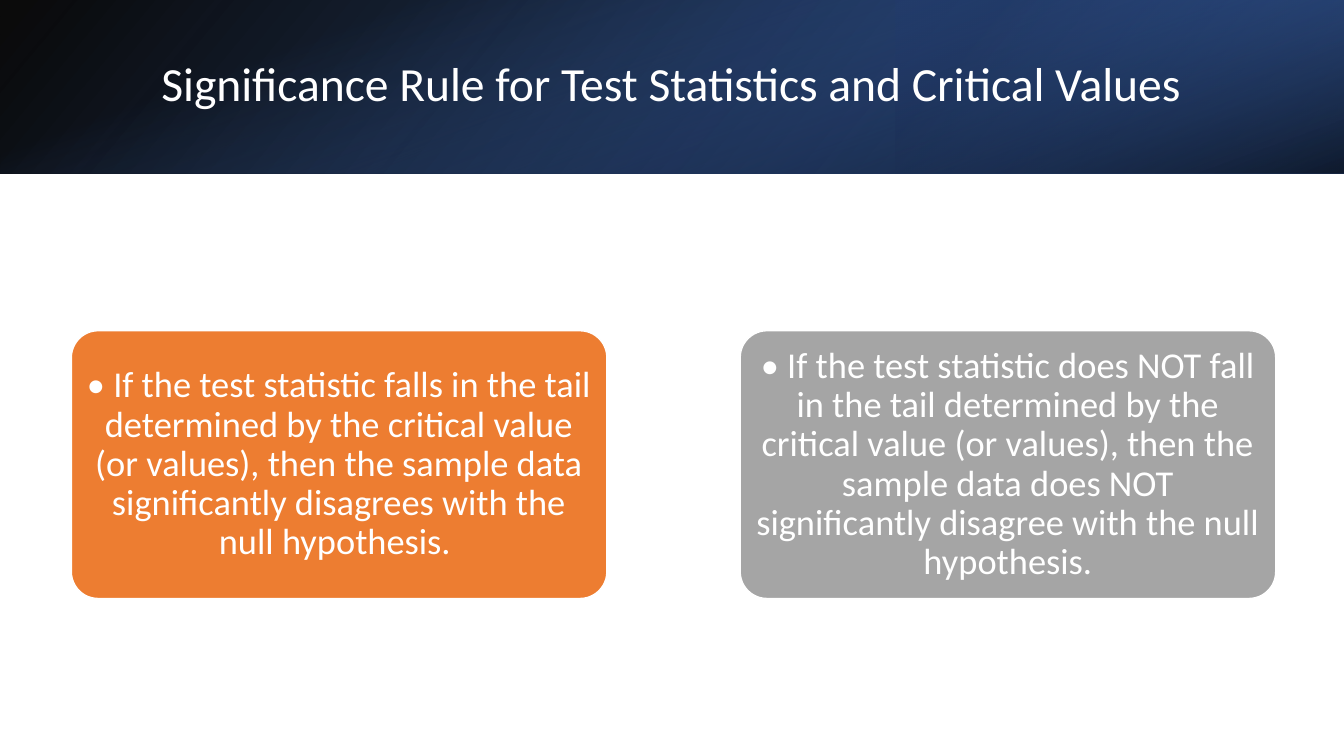
from lxml import etree
from pptx import Presentation
from pptx.dml.color import RGBColor
from pptx.enum.shapes import MSO_SHAPE as Preset
from pptx.enum.text import MSO_ANCHOR as Anchor, MSO_AUTO_SIZE as AutoSize, PP_ALIGN as Align
from pptx.oxml.ns import qn
from pptx.util import Emu, Pt

EMU_PER_PX = 9525
PAGE_W, PAGE_H, BAND_H = 1280, 720, 165
WHITE = "FFFFFF"
RULES = [
    ("ED7D31", "• If the test statistic falls in the tail determined by the critical value "
               "(or values), then the sample data significantly disagrees with the null hypothesis. "),
    ("A5A5A5", "• If the test statistic does NOT fall in the tail determined by the critical value "
               "(or values), then the sample data does NOT significantly disagree with the null hypothesis."),
]


def px(length):
    return Emu(round(length * EMU_PER_PX))


def colour(value):
    return RGBColor.from_string(value)


def add_run(para, text, size):
    para.line_spacing = 0.9
    span = para.add_run()
    span.text = text
    span.font.name = "Calibri"
    span.font.size = Pt(size)
    span.font.color.rgb = colour(WHITE)


def add_box(page, preset, left, top, width, height):
    box = page.shapes.add_shape(preset, px(left), px(top), px(width), px(height))
    box.shadow.inherit = False
    return box


def add_gradient_band(page, left, top, width, height, stops, angle, rotation=0, flip=False):
    band = add_box(page, Preset.RECTANGLE, left, top, width, height)
    band.rotation = rotation
    band.line.fill.background()
    if flip:
        band.element.spPr.xfrm.set("flipH", "1")
    band.fill.gradient()
    gradient = band.element.spPr.find(qn("a:gradFill"))
    for child in list(gradient):
        gradient.remove(child)
    gradient.set("rotWithShape", "1")
    stop_list = etree.SubElement(gradient, qn("a:gsLst"))
    for position, value, opacity in stops:
        stop = etree.SubElement(stop_list, qn("a:gs"), pos=str(position * 1000))
        shade = etree.SubElement(stop, qn("a:srgbClr"), val=value)
        etree.SubElement(shade, qn("a:alpha"), val=str(opacity * 1000))
    etree.SubElement(gradient, qn("a:lin"), ang=str(angle * 60000), scaled="0")


def add_header(page):
    add_gradient_band(page, 0, 0, PAGE_W, BAND_H,
                      [(0, "000000", 96), (100, "2F5597", 100)], 140, flip=True)
    add_gradient_band(page, PAGE_W * 2 / 3, 0, PAGE_W / 3, BAND_H,
                      [(19, "203864", 68), (100, "4472C4", 79)], 320, rotation=180, flip=True)
    offset = (PAGE_W - BAND_H) / 2
    add_gradient_band(page, offset, -offset, BAND_H, PAGE_W,
                      [(23, "4472C4", 0), (99, "000000", 74)], 340, rotation=90)


def set_title(page, text):
    title = page.shapes.title
    title.left, title.top, title.width, title.height = px(144), px(36), px(1054), px(92)
    frame = title.text_frame
    frame.auto_size = AutoSize.NONE
    frame.vertical_anchor = Anchor.MIDDLE
    para = frame.paragraphs[0]
    para.alignment = Align.LEFT
    add_run(para, text, 34)
    page.shapes.element.append(title.element)


def add_rule_card(page, left, fill, text):
    card = add_box(page, Preset.ROUNDED_RECTANGLE, left, 315, 510, 255)
    card.adjustments[0] = 0.1
    card.fill.solid()
    card.fill.fore_color.rgb = colour(fill)
    card.line.color.rgb = colour(WHITE)
    card.line.width = Pt(1)
    frame = card.text_frame
    frame.word_wrap = True
    frame.vertical_anchor = Anchor.MIDDLE
    frame.margin_left = frame.margin_right = px(5)
    frame.margin_top = frame.margin_bottom = px(4)
    para = frame.paragraphs[0]
    para.alignment = Align.CENTER
    add_run(para, text, 26)


def main():
    deck = Presentation()
    deck.slide_width, deck.slide_height = px(PAGE_W), px(PAGE_H)
    page = deck.slides.add_slide(deck.slide_layouts[5])
    add_header(page)
    set_title(page, "Significance Rule for Test Statistics and Critical Values")
    for index, (fill, text) in enumerate(RULES):
        add_rule_card(page, 68 + index * 637, fill, text)
    deck.save("out.pptx")


if __name__ == "__main__":
    main()
